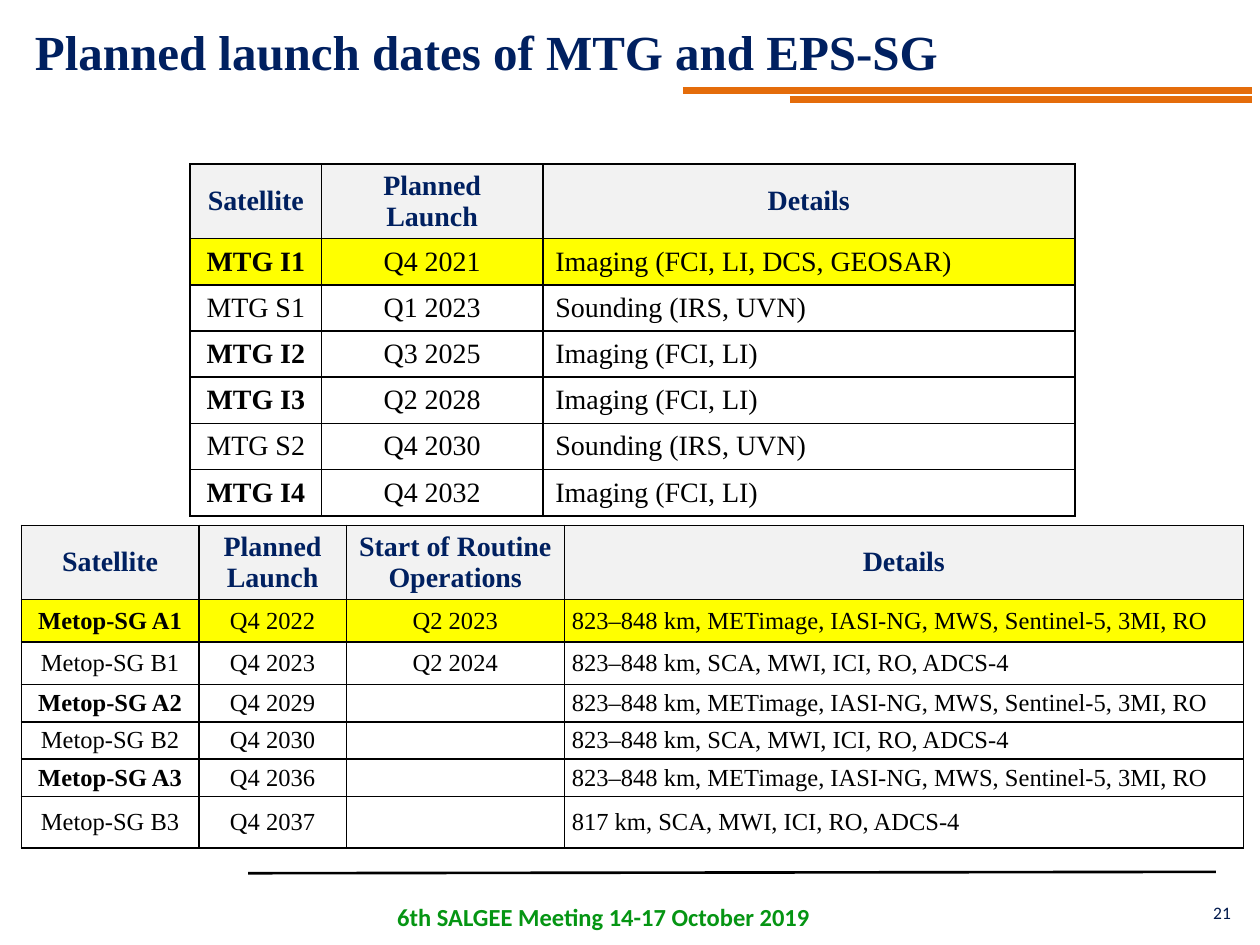
from dataclasses import dataclass
from lxml import etree
from pptx import Presentation
from pptx.dml.color import RGBColor
from pptx.enum.shapes import MSO_CONNECTOR
from pptx.enum.text import MSO_ANCHOR, PP_ALIGN
from pptx.oxml.ns import qn
from pptx.util import Pt

LEFT, CENTER = PP_ALIGN.LEFT, PP_ALIGN.CENTER
MIDDLE = MSO_ANCHOR.MIDDLE
STRAIGHT = MSO_CONNECTOR.STRAIGHT


@dataclass(frozen=True)
class Theme:
    serif: str = "Times New Roman"
    sans: str = "Calibri"
    navy: str = "002060"
    black: str = "000000"
    orange: str = "E46C0A"
    green: str = "059513"
    ink: str = "00194C"
    grey: str = "F2F2F2"
    yellow: str = "FFFF00"
    title: float = 28
    head: float = 16
    body: float = 14
    foot: float = 14
    page: float = 10
    border: float = 1


@dataclass(frozen=True)
class Style:
    font: str
    size: float
    color: str
    bold: bool = False
    align: int = CENTER


@dataclass(frozen=True)
class Label:
    text: str
    box: tuple[float, float, float, float]
    style: Style
    wrap: bool = True


@dataclass(frozen=True)
class Rule:
    start: tuple[float, float]
    end: tuple[float, float]
    color: str
    width: float


@dataclass(frozen=True)
class Grid:
    left: float
    top: float
    cols: list[float]
    rows: list[float]
    pad: tuple[float, float]
    size: float
    bold: set[int]
    data: list[tuple[str, ...]]


THEME = Theme()

RULES = [
    Rule((451.4, 56.9), (715.7, 56.9), THEME.orange, 4),
    Rule((390.2, 51.8), (715.7, 51.8), THEME.orange, 4),
    Rule((141.8, 499), (694.8, 498.2), THEME.black, 1.5),
]

LABELS = [
    Label("6th SALGEE Meeting 14-17 October 2019", (203.8, 511.9, 282.2, 24.5),
          Style(THEME.sans, THEME.foot, THEME.green, True)),
    Label("21", (686.2, 511.9, 25.9, 19.4),
          Style(THEME.sans, THEME.page, THEME.ink, align=LEFT), wrap=False),
    Label("Planned launch dates of MTG and EPS-SG", (0, 8.6, 555.8, 41),
          Style(THEME.serif, THEME.title, THEME.navy, True)),
]

IMAGING = "Imaging (FCI, LI)"
SOUNDING = "Sounding (IRS, UVN)"
ORBIT = "823–848 km, "
LOAD_A = ORBIT + "METimage, IASI-NG, MWS, Sentinel-5, 3MI, RO"
LOAD_B = "SCA, MWI, ICI, RO, ADCS-4"

GRIDS = [
    Grid(108.7, 93.6, [75, 126.5, 304], [26.4] * 7, (7.2, 3.6), THEME.head, {1, 3, 4, 6}, [
        ("Satellite", "Planned Launch", "Details"),
        ("MTG I1", "Q4 2021", "Imaging (FCI, LI, DCS, GEOSAR)"),
        ("MTG S1", "Q1 2023", SOUNDING),
        ("MTG I2", "Q3 2025", IMAGING),
        ("MTG I3", "Q2 2028", IMAGING),
        ("MTG S2", "Q4 2030", SOUNDING),
        ("MTG I4", "Q4 2032", IMAGING),
    ]),
    Grid(12.2, 300.2, [101.5, 84.2, 124.6, 388.1], [42.5, 24.1, 24.5, 20.9, 20.9, 20.9, 29.5],
         (4.3, 2.1), THEME.body, {1, 3, 5}, [
        ("Satellite", "Planned Launch", "Start of Routine Operations", "Details"),
        ("Metop-SG A1", "Q4 2022", "Q2 2023", LOAD_A),
        ("Metop-SG B1", "Q4 2023", "Q2 2024", ORBIT + LOAD_B),
        ("Metop-SG A2", "Q4 2029", "", LOAD_A),
        ("Metop-SG B2", "Q4 2030", "", ORBIT + LOAD_B),
        ("Metop-SG A3", "Q4 2036", "", LOAD_A),
        ("Metop-SG B3", "Q4 2037", "", "817 km, " + LOAD_B),
    ]),
]


def write(para, text: str, style: Style) -> None:
    para.alignment = style.align
    if not text:
        # An empty cell needs its own text size, or it stretches the row.
        end = etree.SubElement(para._p, qn("a:endParaRPr"))
        end.set("sz", str(int(style.size * 100)))
        return
    run = para.add_run()
    run.text = text
    form = {"name": style.font, "size": Pt(style.size), "bold": style.bold}
    for name, value in form.items():
        setattr(run.font, name, value)
    run.font.color.rgb = RGBColor.from_string(style.color)


def add_label(slide, label: Label) -> None:
    box = slide.shapes.add_textbox(*map(Pt, label.box))
    box.text_frame.word_wrap = label.wrap
    write(box.text_frame.paragraphs[0], label.text, label.style)


def add_rule(slide, rule: Rule) -> None:
    line = slide.shapes.add_connector(STRAIGHT, *map(Pt, rule.start + rule.end))
    line.line.color.rgb = RGBColor.from_string(rule.color)
    line.line.width = Pt(rule.width)
    etree.SubElement(line._element.spPr, qn("a:effectLst"))


def add_edges(cell) -> None:
    """Draw the four borders of a cell."""
    props = cell._tc.get_or_add_tcPr()
    for place, side in enumerate("LRTB"):
        edge = etree.Element(qn(f"a:ln{side}"), w=str(Pt(THEME.border)))
        fill = etree.SubElement(edge, qn("a:solidFill"))
        etree.SubElement(fill, qn("a:srgbClr"), val=THEME.black)
        props.insert(place, edge)


def paint(cell, row: int) -> None:
    """Fill the head row and the next launch; leave the rest clear."""
    color = {0: THEME.grey, 1: THEME.yellow}.get(row)
    if color:
        cell.fill.solid()
        cell.fill.fore_color.rgb = RGBColor.from_string(color)
    else:
        cell.fill.background()


def pick_style(grid: Grid, row: int, col: int) -> Style:
    if row == 0:
        return Style(THEME.serif, THEME.head, THEME.navy, True)
    last = col == len(grid.cols) - 1
    return Style(THEME.serif, grid.size, THEME.black, col == 0 and row in grid.bold,
                 LEFT if last else CENTER)


def add_grid(slide, grid: Grid) -> None:
    area = (grid.left, grid.top, sum(grid.cols), sum(grid.rows))
    table = slide.shapes.add_table(len(grid.rows), len(grid.cols), *map(Pt, area)).table
    table.first_row = table.horz_banding = False
    for col, width in zip(table.columns, grid.cols):
        col.width = Pt(width)
    for row, height in zip(table.rows, grid.rows):
        row.height = Pt(height)
    side, edge = map(Pt, grid.pad)
    form = {"margin_left": side, "margin_right": side, "margin_top": edge,
            "margin_bottom": edge, "vertical_anchor": MIDDLE}
    for i, texts in enumerate(grid.data):
        for j, text in enumerate(texts):
            cell = table.cell(i, j)
            for name, value in form.items():
                setattr(cell, name, value)
            paint(cell, i)
            add_edges(cell)
            write(cell.text_frame.paragraphs[0], text, pick_style(grid, i, j))


def main() -> None:
    deck = Presentation()
    deck.slide_width, deck.slide_height = Pt(720), Pt(540)
    slide = deck.slides.add_slide(deck.slide_layouts[6])
    for rule in RULES:
        add_rule(slide, rule)
    for grid in GRIDS:
        add_grid(slide, grid)
    for label in LABELS:
        add_label(slide, label)
    deck.save("out.pptx")


if __name__ == "__main__":
    main()
